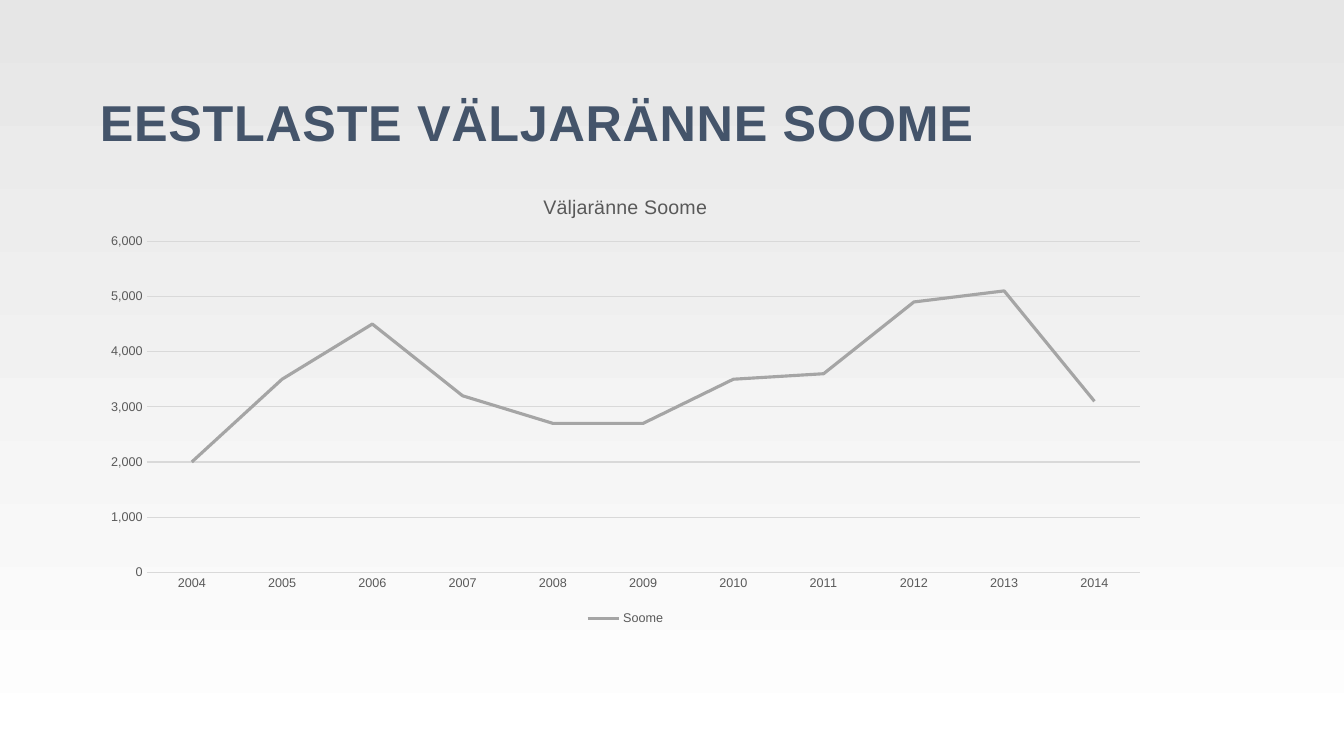
"""Build a slide with a line chart of Estonian emigration to Finland."""
import pptx
import pptx.chart.data
import pptx.dml.color
import pptx.enum.chart
import pptx.enum.text
import pptx.util
from pptx.util import Cm

FONT = "Arial"
COLOURS = {
    "top": "E6E6E6",
    "bottom": "FFFFFF",
    "title": "44546A",
    "label": "595959",
    "grid": "D9D9D9",
    "series": "A5A5A5",
}
YEARS = [str(year) for year in range(2004, 2015)]
EMIGRANTS = [2000, 3500, 4500, 3200, 2700, 2700, 3500, 3600, 4900, 5100, 3100]


def colour(name):
    """Return the named colour."""
    return pptx.dml.color.RGBColor.from_string(COLOURS[name])


def style_font(font, size, name, bold=False):
    """Set typeface, size, colour and weight of a font."""
    font.name = FONT
    font.size = pptx.util.Pt(size)
    font.color.rgb = colour(name)
    font.bold = bold


def style_line(line, name, width):
    """Set colour and width of a line."""
    line.color.rgb = colour(name)
    line.width = pptx.util.Pt(width)


def paint_background(page):
    """Fill the page with a gradient running from top to bottom."""
    fill = page.background.fill
    fill.gradient()
    fill.gradient_angle = 270
    for stop, name in zip(fill.gradient_stops, ("top", "bottom")):
        stop.color.rgb = colour(name)


def write_title(page, text):
    """Place and format the title placeholder."""
    box = page.shapes.title
    box.left, box.top, box.width, box.height = Cm(2.26), Cm(0.76), Cm(29.36), Cm(3.18)
    frame = box.text_frame
    frame.word_wrap = True
    frame.auto_size = pptx.enum.text.MSO_AUTO_SIZE.NONE
    frame.vertical_anchor = pptx.enum.text.MSO_ANCHOR.BOTTOM
    para = frame.paragraphs[0]
    para.alignment = pptx.enum.text.PP_ALIGN.LEFT
    span = para.add_run()
    span.text = text
    style_font(span.font, 36, "title", bold=True)
    span.font._element.set("spc", "50")


def style_axes(chart):
    """Format the year axis and the count axis."""
    for axis in (chart.category_axis, chart.value_axis):
        axis.major_tick_mark = pptx.enum.chart.XL_TICK_MARK.NONE
        axis.minor_tick_mark = pptx.enum.chart.XL_TICK_MARK.NONE
        style_font(axis.tick_labels.font, 9, "label")
    style_line(chart.category_axis.format.line, "grid", 0.75)
    counts = chart.value_axis
    counts.minimum_scale, counts.maximum_scale, counts.major_unit = 0, 6000, 1000
    counts.tick_labels.number_format = "#,##0"
    counts.tick_labels.number_format_is_linked = False
    counts.format.line.fill.background()
    counts.has_major_gridlines = True
    style_line(counts.major_gridlines.format.line, "grid", 0.75)


def add_line_chart(page, heading, name):
    """Add the line chart with its heading and legend."""
    data = pptx.chart.data.CategoryChartData(number_format="#,##0")
    data.categories = YEARS
    data.add_series(name, EMIGRANTS)
    chart = page.shapes.add_chart(
        pptx.enum.chart.XL_CHART_TYPE.LINE,
        Cm(2.26), Cm(4.45), Cm(27), Cm(11.43), data,
    ).chart
    style_font(chart.font, 10, "label")
    chart.has_title = True
    span = chart.chart_title.text_frame.paragraphs[0].add_run()
    span.text = heading
    style_font(span.font, 14, "label")
    chart.chart_title.include_in_layout = False
    chart.has_legend = True
    chart.legend.position = pptx.enum.chart.XL_LEGEND_POSITION.BOTTOM
    chart.legend.include_in_layout = False
    style_font(chart.legend.font, 9, "label")
    style_axes(chart)
    plot = chart.plots[0]
    plot.vary_by_categories = False
    series = plot.series[0]
    series.smooth = False
    series.marker.style = pptx.enum.chart.XL_MARKER_STYLE.NONE
    style_line(series.format.line, "series", 2.25)


def main():
    """Build and save the deck."""
    deck = pptx.Presentation()
    deck.slide_width, deck.slide_height = Cm(33.87), Cm(19.05)
    page = deck.slides.add_slide(deck.slide_layouts.get_by_name("Title Only"))
    paint_background(page)
    write_title(page, "EESTLASTE VÄLJARÄNNE SOOME")
    add_line_chart(page, "Väljaränne Soome", "Soome")
    deck.save("out.pptx")


if __name__ == "__main__":
    main()
